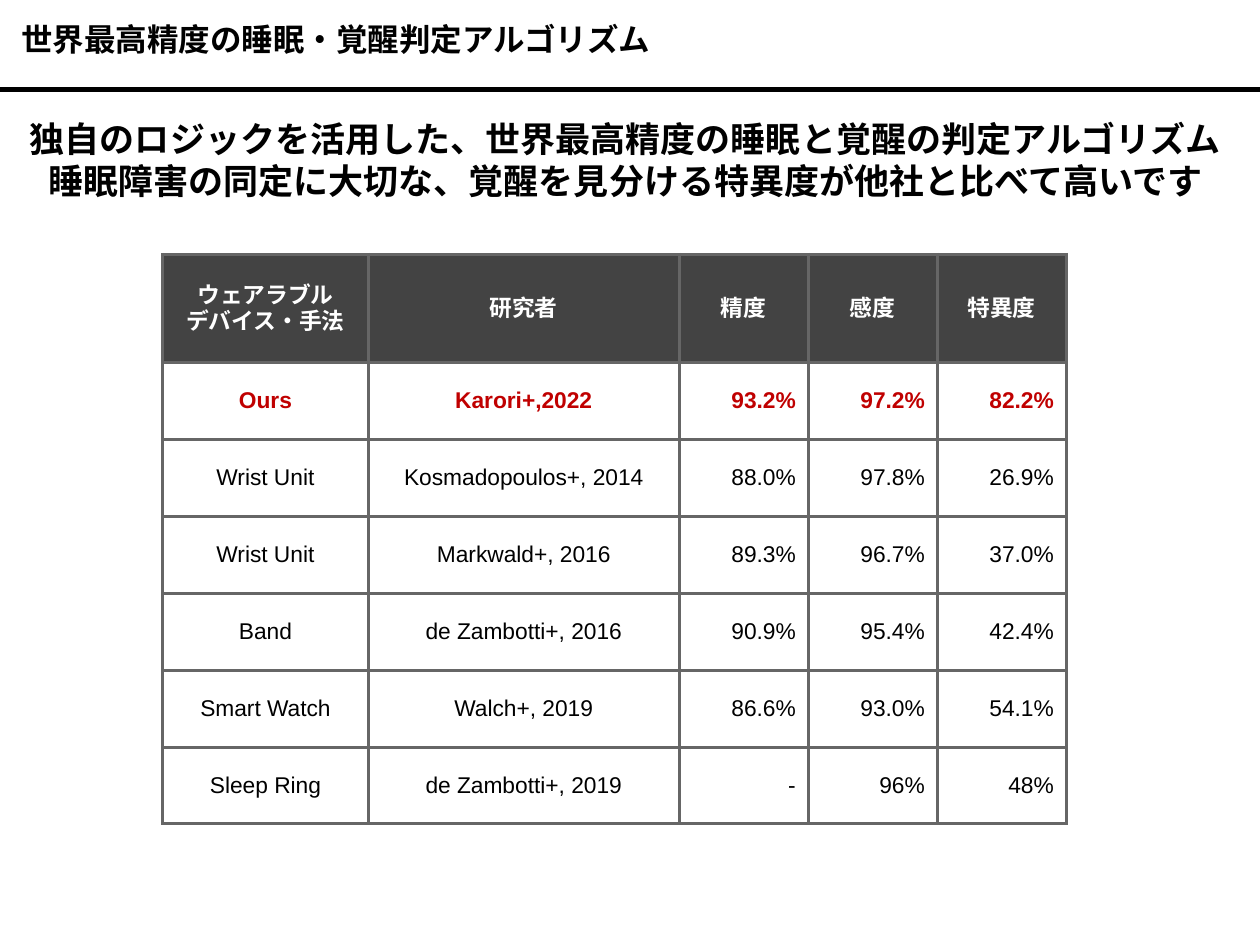
"""Build the slide comparing sleep and wake detection algorithms."""
from lxml.etree import SubElement
from pptx import Presentation
from pptx.dml.color import RGBColor
from pptx.enum.shapes import MSO_CONNECTOR
from pptx.enum.text import MSO_ANCHOR, MSO_AUTO_SIZE, PP_ALIGN
from pptx.oxml import parse_xml
from pptx.oxml.ns import nsdecls, qn
from pptx.util import Cm, Pt

color = RGBColor.from_string


def write(frame, text, size=13, font="Arial", fill="000000", bold=False, align=PP_ALIGN.LEFT):
    frame.word_wrap = True
    frame.text = text
    for paragraph in frame.paragraphs:
        paragraph.alignment = align
        for run in paragraph.runs:
            run.font.size = Pt(size)
            run.font.name = font
            run.font.bold = bold
            run.font.color.rgb = color(fill)
            SubElement(run.font._element, qn("a:ea")).set("typeface", font)


presentation = Presentation()
presentation.slide_width = Cm(25.4)
presentation.slide_height = Cm(19.05)
slide = presentation.slides.add_slide(presentation.slide_layouts[6])

rule = slide.shapes.add_connector(MSO_CONNECTOR.STRAIGHT, Cm(0), Cm(1.8), Cm(25.4), Cm(1.8))
rule.line.color.rgb = color("000000")
rule.line.width = Pt(2.75)
SubElement(rule._element.spPr, qn("a:effectLst"))

title = slide.shapes.add_textbox(Cm(0.18), Cm(0.28), Cm(21.31), Cm(1.04))
write(title.text_frame, "世界最高精度の睡眠・覚醒判定アルゴリズム",
      size=18, font="TeX Gyre Adventor", bold=True)
title.text_frame.auto_size = MSO_AUTO_SIZE.SHAPE_TO_FIT_TEXT

rows = [
    ("ウェアラブル\nデバイス・手法", "研究者", "精度", "感度", "特異度"),
    ("Ours", "Karori+,2022", "93.2%", "97.2%", "82.2%"),
    ("Wrist Unit", "Kosmadopoulos+, 2014", "88.0%", "97.8%", "26.9%"),
    ("Wrist Unit", "Markwald+, 2016", "89.3%", "96.7%", "37.0%"),
    ("Band", "de Zambotti+, 2016", "90.9%", "95.4%", "42.4%"),
    ("Smart Watch", "Walch+, 2019", "86.6%", "93.0%", "54.1%"),
    ("Sleep Ring", "de Zambotti+, 2019", "-", "96%", "48%"),
]
column_widths = [4.14, 6.27, 2.6, 2.6, 2.6]
row_heights = [2.18] + [1.55] * 6
row_colors = ["FFFFFF", "C00000"] + ["000000"] * 5

table = slide.shapes.add_table(len(rows), len(column_widths), Cm(3.28), Cm(5.13),
                               Cm(sum(column_widths)), Cm(sum(row_heights))).table
table.first_row = False
table.horz_banding = False
for column, width in zip(table.columns, column_widths):
    column.width = Cm(width)
for row, height in zip(table.rows, row_heights):
    row.height = Cm(height)

for row_index, values in enumerate(rows):
    for column_index, value in enumerate(values):
        cell = table.cell(row_index, column_index)
        is_number = row_index > 0 and column_index > 1
        write(cell.text_frame, value, fill=row_colors[row_index], bold=row_index < 2,
              align=PP_ALIGN.RIGHT if is_number else PP_ALIGN.CENTER)
        cell.vertical_anchor = MSO_ANCHOR.MIDDLE
        cell.margin_left = cell.margin_right = cell.margin_top = cell.margin_bottom = Cm(0.25)
        properties = cell._tc.get_or_add_tcPr()
        for side in ("lnL", "lnR", "lnT", "lnB"):
            properties.append(parse_xml(
                f'<a:{side} {nsdecls("a")} w="{Pt(2)}"><a:solidFill>'
                f'<a:srgbClr val="666666"/></a:solidFill></a:{side}>'))
        if row_index == 0:
            cell.fill.solid()
            cell.fill.fore_color.rgb = color("434343")
        else:
            cell.fill.background()

message = slide.shapes.add_textbox(Cm(-0.18), Cm(2.24), Cm(25.58), Cm(1.96))
write(message.text_frame,
      "独自のロジックを活用した、世界最高精度の睡眠と覚醒の判定アルゴリズム\n"
      "睡眠障害の同定に大切な、覚醒を見分ける特異度が他社と比べて高いです",
      size=20, bold=True, align=PP_ALIGN.CENTER)
message.text_frame.auto_size = MSO_AUTO_SIZE.SHAPE_TO_FIT_TEXT

presentation.save("out.pptx")
